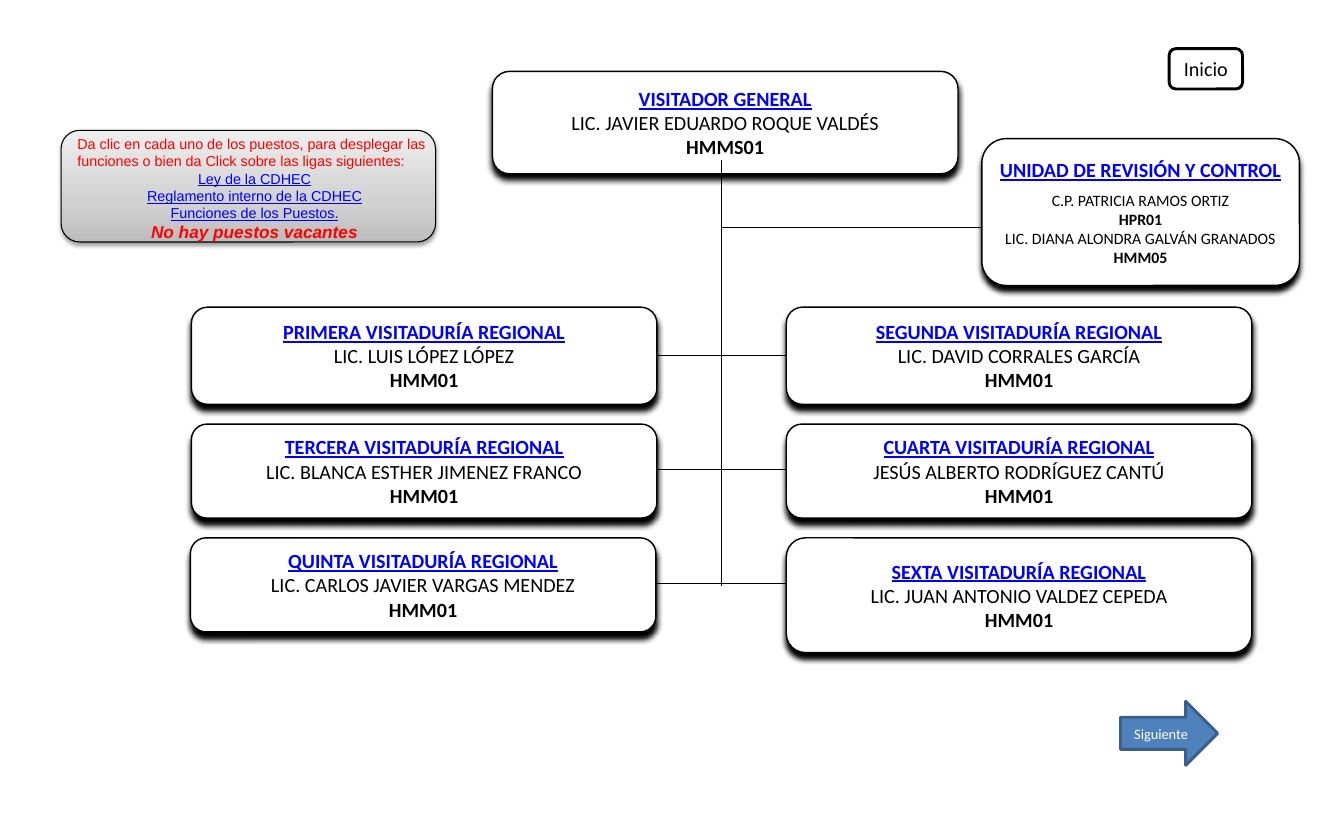
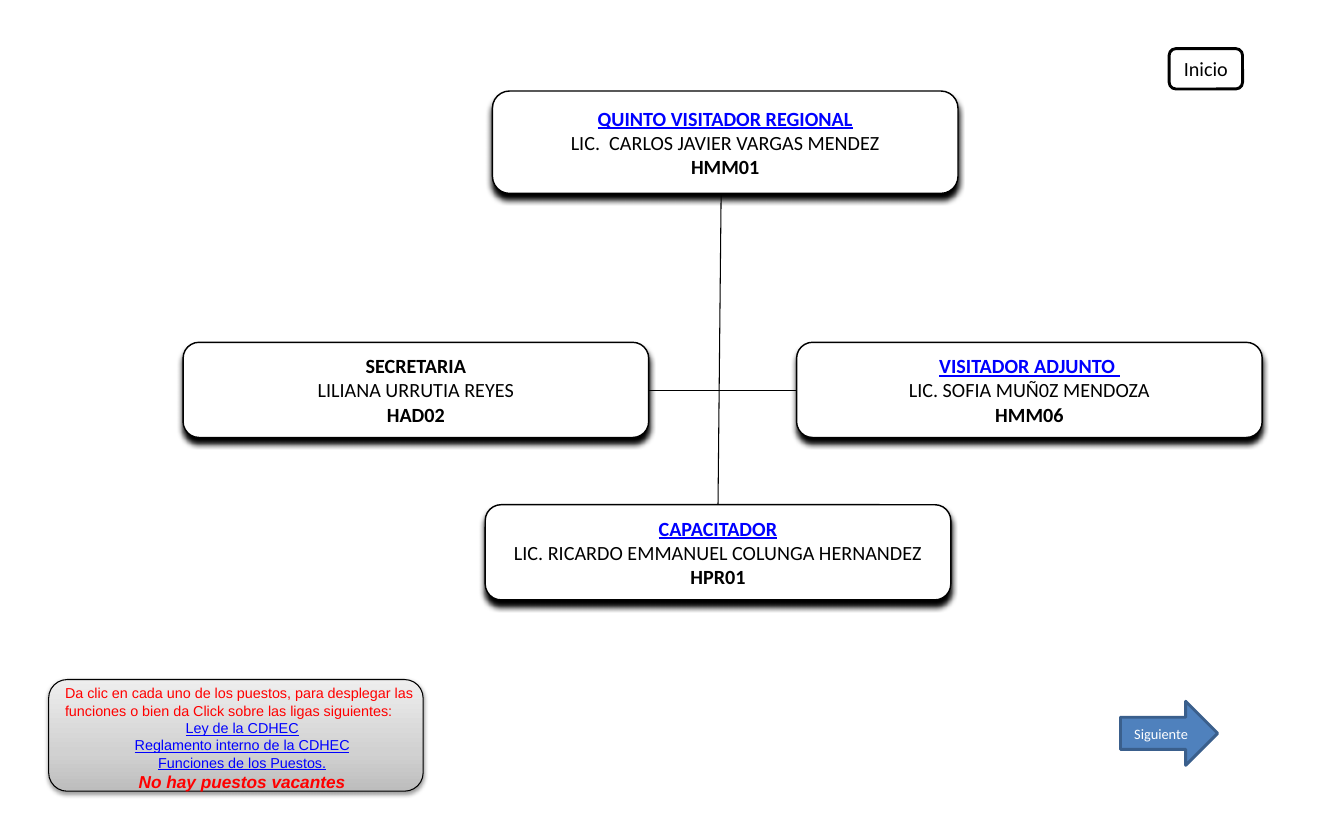
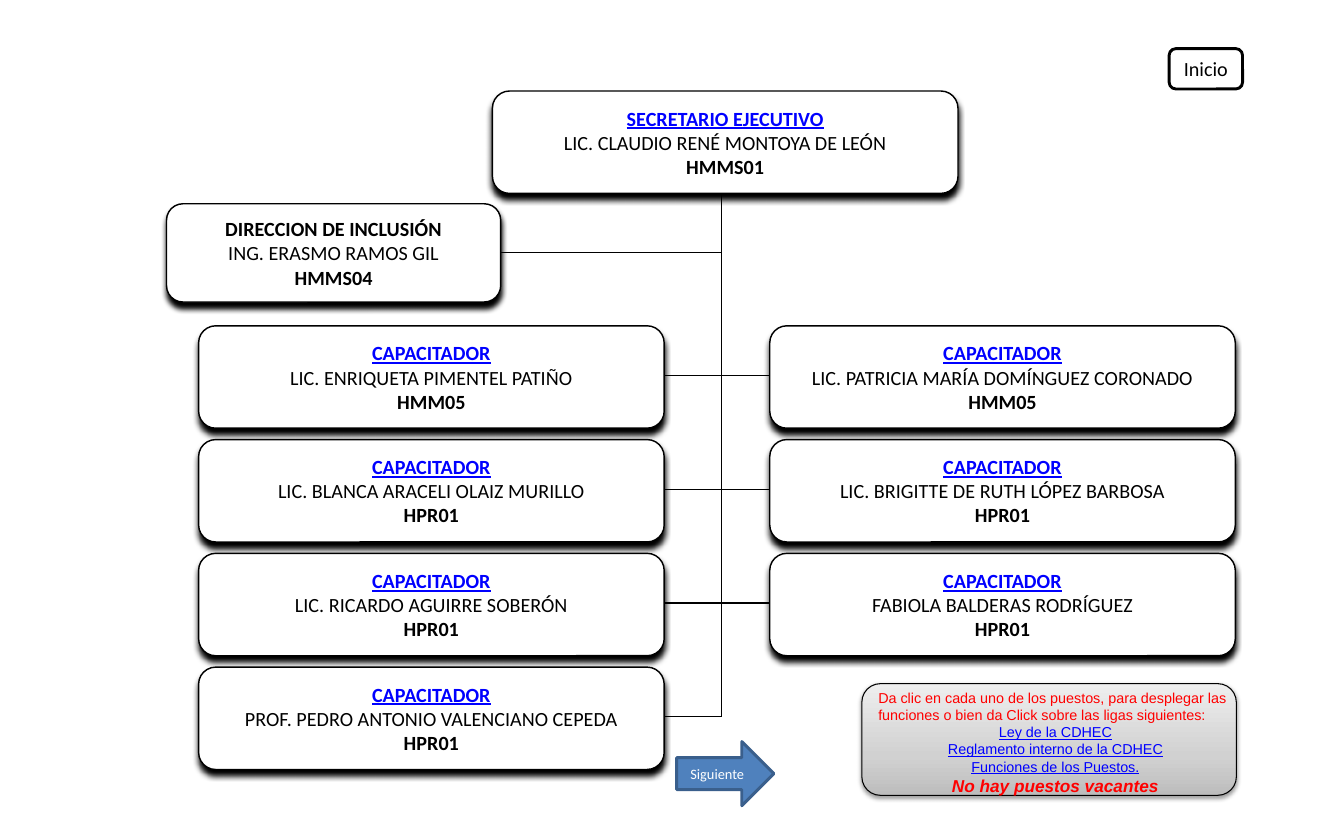
import pptx
import pptx.util
import pptx.dml.color
import pptx.enum.shapes
import pptx.enum.text
import pptx.oxml.ns
from lxml import etree

Inches = pptx.util.Inches
Shape = pptx.enum.shapes.MSO_SHAPE
Align = pptx.enum.text.PP_ALIGN
Anchor = pptx.enum.text.MSO_ANCHOR
qn = pptx.oxml.ns.qn

COLORS = {
    "ink": "000000", "paper": "FFFFFF", "link": "0000FF", "alert": "FF0000",
    "arrow": "4F81BD", "edge": "3A5F8C",
    "dark": "BDBDBD", "mid": "D1D1D1", "light": "EEEEEE",
}
WIDTH = 4.5
STEM = 6.97
STEP = 1.1


def color(name):
    return pptx.dml.color.RGBColor.from_string(COLORS[name])


def add_text(frame, text, size=14, font="Calibri", tint="ink", bold=False,
             under=False, slant=False, align=Align.CENTER, after=0):
    para = frame.paragraphs[0]
    if para.runs:
        para = frame.add_paragraph()
    para.alignment = align
    para.space_after = pptx.util.Pt(after)
    run = para.add_run()
    run.text = text
    face = run.font
    face.name, face.size = font, pptx.util.Pt(size)
    face.bold, face.italic, face.underline = bold, slant, under
    face.color.rgb = color(tint)


def add_shade(shape, blur, dist, alpha):
    effects = shape.element.spPr.find(qn("a:effectLst"))
    shade = etree.SubElement(
        effects, qn("a:outerShdw"), blurRad=str(pptx.util.Pt(blur)),
        dist=str(pptx.util.Pt(dist)), dir="5400000", algn="t", rotWithShape="0")
    tone = etree.SubElement(shade, qn("a:srgbClr"), val=COLORS["ink"])
    etree.SubElement(tone, qn("a:alpha"), val=str(alpha * 1000))


def add_box(slide, kind, place, fill="paper", edge="ink", weight=1):
    shape = slide.shapes.add_shape(kind, *map(Inches, place))
    shape.shadow.inherit = False
    shape.fill.solid()
    shape.fill.fore_color.rgb = color(fill)
    shape.line.color.rgb = color(edge)
    shape.line.width = pptx.util.Pt(weight)
    shape.text_frame.vertical_anchor = Anchor.MIDDLE
    return shape


def add_card(slide, place, title, *staff, link=True, size=14, gap=0):
    card = add_box(slide, Shape.ROUNDED_RECTANGLE, place)
    add_shade(card, 4, 4, 100)
    frame = card.text_frame
    frame.word_wrap = False
    frame.margin_left = frame.margin_right = Inches(0.17)
    frame.margin_top = frame.margin_bottom = Inches(0.09)
    add_text(frame, title, tint="link" if link else "ink", bold=True,
             under=link, after=gap)
    for index, text in enumerate(staff):
        add_text(frame, text, size=size, bold=index % 2 == 1)


def add_line(slide, left, top, right, bottom):
    line = slide.shapes.add_connector(
        pptx.enum.shapes.MSO_CONNECTOR.STRAIGHT,
        *map(Inches, (left, top, right, bottom)))
    line.line.color.rgb = color("ink")
    line.line.width = pptx.util.Pt(0.75)
    etree.SubElement(line.element.spPr, qn("a:effectLst"))


def add_note(slide, left, top):
    panel = add_box(slide, Shape.ROUNDED_RECTANGLE, (left, top, 3.62, 1.08),
                    weight=0.75)
    panel.fill.gradient()
    panel.fill.gradient_angle = 90
    stops = panel.element.spPr.find(qn("a:gradFill")).find(qn("a:gsLst"))
    for stop in list(stops):
        stops.remove(stop)
    for spot, name in ((0, "dark"), (35, "mid"), (100, "light")):
        stop = etree.SubElement(stops, qn("a:gs"), pos=str(spot * 1000))
        etree.SubElement(stop, qn("a:srgbClr"), val=COLORS[name])
    add_shade(panel, 3.1, 1.6, 38)
    place = (left + 0.06, top, 3.62, 1.14)
    frame = slide.shapes.add_textbox(*map(Inches, place)).text_frame
    frame.word_wrap = True
    add_text(frame, "Da clic en cada uno de los puestos, para desplegar las "
             "funciones o bien da Click sobre las ligas siguientes:",
             size=10, font="Arial", tint="alert", align=Align.LEFT)
    for text in ("Ley de la CDHEC", "Reglamento interno de la CDHEC",
                 "Funciones de los Puestos."):
        add_text(frame, text, size=10, font="Arial", tint="link", under=True)
    add_text(frame, "No hay puestos vacantes", size=12, font="Arial",
             tint="alert", bold=True, slant=True)


def add_tools(slide, note, arrow=(10.83, 6.78)):
    home = add_box(slide, Shape.ROUNDED_RECTANGLE, (11.3, 0.47, 0.71, 0.39),
                   weight=2)
    add_text(home.text_frame, "Inicio")
    add_note(slide, *note)
    after = add_box(slide, Shape.RIGHT_ARROW, (*arrow, 0.94, 0.62),
                    fill="arrow", edge="edge", weight=2)
    add_text(after.text_frame, "Siguiente", size=10, tint="paper")


def add_head(slide, top, *texts):
    add_card(slide, (4.76, top, WIDTH, 0.99), *texts)


def draw_chief(slide):
    add_head(slide, 0.69, "VISITADOR GENERAL",
             "LIC. JAVIER EDUARDO ROQUE VALDÉS", "HMMS01")
    add_line(slide, STEM, 1.55, STEM, 5.67)
    for row in range(3):
        level = 3.44 + row * STEP
        add_line(slide, 6, level, 8, level)
    add_line(slide, STEM, 2.2, 9.65, 2.2)
    for left, top, height, order, name in (
            (7.6, 2.97, 0.94, "SEGUNDA", "LIC. DAVID CORRALES GARCÍA"),
            (1.85, 2.97, 0.94, "PRIMERA", "LIC. LUIS LÓPEZ LÓPEZ"),
            (1.85, 4.1, 0.91, "TERCERA", "LIC. BLANCA ESTHER JIMENEZ FRANCO"),
            (7.6, 4.1, 0.91, "CUARTA", "JESÚS ALBERTO RODRÍGUEZ CANTÚ"),
            (1.84, 5.2, 0.91, "QUINTA", "LIC. CARLOS JAVIER VARGAS MENDEZ"),
            (7.6, 5.2, 1.11, "SEXTA", "LIC. JUAN ANTONIO VALDEZ CEPEDA")):
        add_card(slide, (left, top, WIDTH, height),
                 f"{order} VISITADURÍA REGIONAL", name, "HMM01")
    add_card(slide, (9.49, 1.34, 3.07, 1.42), "UNIDAD DE REVISIÓN Y CONTROL",
             "C.P. PATRICIA RAMOS ORTIZ", "HPR01",
             "LIC. DIANA ALONDRA GALVÁN GRANADOS", "HMM05", size=11, gap=6)
    add_tools(slide, (0.59, 1.26))


def draw_fifth(slide):
    add_head(slide, 0.88, "QUINTO VISITADOR REGIONAL",
             "LIC.  CARLOS JAVIER VARGAS MENDEZ", "HMM01")
    add_line(slide, STEM, 1.89, 6.94, 4.88)
    add_line(slide, 6.11, 3.78, 7.9, 3.78)
    add_card(slide, (1.77, 3.31, WIDTH, 0.92), "SECRETARIA",
             "LILIANA URRUTIA REYES", "HAD02", link=False)
    add_card(slide, (7.7, 3.31, WIDTH, 0.92), "VISITADOR ADJUNTO ",
             "LIC. SOFIA MUÑ0Z MENDOZA", "HMM06")
    add_card(slide, (4.69, 4.88, WIDTH, 0.92), "CAPACITADOR",
             "LIC. RICARDO EMMANUEL COLUNGA HERNANDEZ", "HPR01")
    add_tools(slide, (0.47, 6.57))


def draw_board(slide):
    add_head(slide, 0.88, "SECRETARIO EJECUTIVO",
             "LIC. CLAUDIO RENÉ MONTOYA DE LEÓN", "HMMS01")
    add_line(slide, STEM, 1.89, STEM, 6.93)
    add_line(slide, 4.75, 2.44, STEM, 2.44)
    add_card(slide, (1.61, 1.97, 3.23, 0.95), "DIRECCION DE INCLUSIÓN",
             "ING. ERASMO RAMOS GIL", "HMMS04", link=False)
    for row, (code, *names) in enumerate((
            ("HMM05", "LIC. ENRIQUETA PIMENTEL PATIÑO",
             "LIC. PATRICIA MARÍA DOMÍNGUEZ CORONADO"),
            ("HPR01", "LIC. BLANCA ARACELI OLAIZ MURILLO",
             "LIC. BRIGITTE DE RUTH LÓPEZ BARBOSA"),
            ("HPR01", "LIC. RICARDO AGUIRRE SOBERÓN",
             "FABIOLA BALDERAS RODRÍGUEZ"),
            ("HPR01", "PROF. PEDRO ANTONIO VALENCIANO CEPEDA"))):
        top = 3.15 + row * STEP
        level = top + 0.48
        add_line(slide, 6, level, 8 if len(names) == 2 else STEM, level)
        for left, name in zip((1.92, 7.44), names):
            add_card(slide, (left, top, WIDTH, 0.99), "CAPACITADOR", name, code)
    add_tools(slide, (8.33, 6.61), arrow=(6.54, 7.17))


def main():
    deck = pptx.Presentation()
    deck.slide_width, deck.slide_height = Inches(12.99), Inches(7.88)
    for draw in (draw_chief, draw_fifth, draw_board):
        draw(deck.slides.add_slide(deck.slide_layouts[6]))
    deck.save("out.pptx")


if __name__ == "__main__":
    main()
